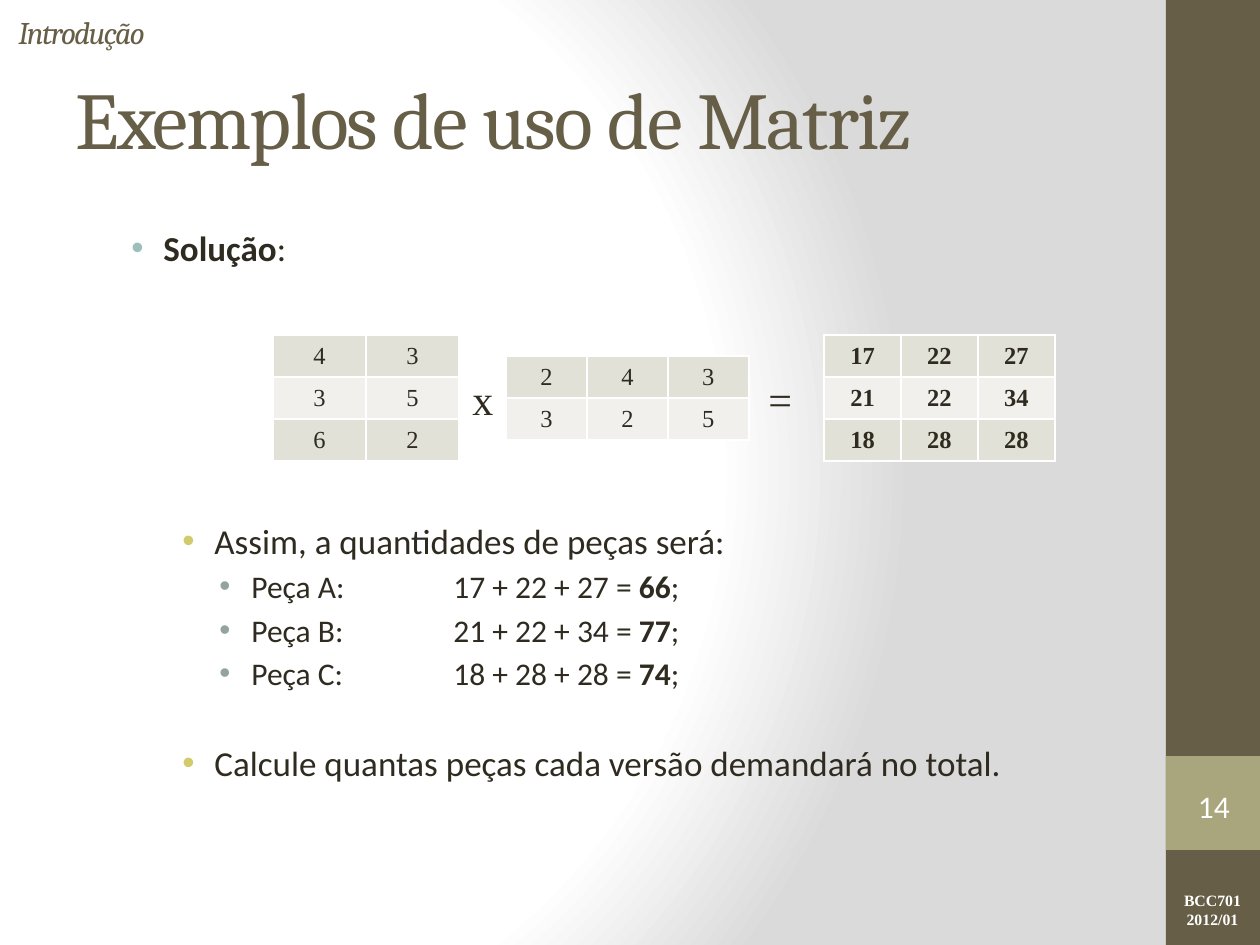
import pptx
import pptx.util
import pptx.oxml
import pptx.oxml.ns
from pptx.dml.color import RGBColor
from pptx.enum.shapes import MSO_SHAPE
from pptx.enum.text import MSO_ANCHOR, PP_ALIGN


class Theme:
    brown, olive, ink, white = "675E47", "A9A57C", "2F2B20", "FFFFFF"
    bands = ("E2E1D7", "F1F0EC")
    bullets = {1: "9CBEBD", 2: "D2CB6C", 3: "95A39D"}
    heading, body, serif = "Cambria", "Calibri", "Times New Roman"
    title, operator, large, medium, cell, small = 46, 24, 20, 18, 14, 9


INDENTS = {1: 88, 2: 139, 3: 176}
HANGING = 32
VALUE_TAB = 378
ROW_HEIGHT = 42

BODY = [
    (1, 0, [("Solução", True), (":", False)]),
    (2, 143.6, [("Assim, a quantidades de peças será:", False)]),
    (3, 3.2, [("Peça A:\t17 + 22 + 27 = ", False), ("66", True), (";", False)]),
    (3, 3.2, [("Peça B:\t21 + 22 + 34 = ", False), ("77", True), (";", False)]),
    (3, 3.2, [("Peça C:\t18 + 28 + 28 = ", False), ("74", True), (";", False)]),
    (2, 28.7, [("Calcule quantas peças cada versão demandará no total.", False)]),
]

MATRICES = [
    {"at": (824, 335), "column": 77, "bold": True,
     "rows": [(17, 22, 27), (21, 22, 34), (18, 28, 28)]},
    {"at": (273, 335), "column": 93, "bold": False,
     "rows": [(4, 3), (3, 5), (6, 2)]},
    {"at": (506, 356), "column": 81, "bold": False,
     "rows": [(2, 4, 3), (3, 2, 5)]},
]

OPERATORS = [("x", (460, 367, 47, 63)), ("=", (756, 367, 49, 63))]

NAMESPACE = pptx.oxml.ns.nsdecls("a", "p")
BACKGROUND = f"""<p:bg {NAMESPACE}><p:bgPr><a:gradFill rotWithShape="1"><a:gsLst>
<a:gs pos="0"><a:srgbClr val="FFFFFF"/></a:gs>
<a:gs pos="75000"><a:srgbClr val="FFFFFF"/></a:gs>
<a:gs pos="100000"><a:srgbClr val="DADADA"/></a:gs></a:gsLst>
<a:path path="circle"><a:fillToRect l="20000" t="50000" r="100000" b="50000"/></a:path>
</a:gradFill><a:effectLst/></p:bgPr></p:bg>"""


def px(value):
    return pptx.util.Emu(round(value * 914400 / 126))


def color(value):
    return RGBColor.from_string(value)


def append_xml(parent, markup):
    parent.append(pptx.oxml.parse_xml(markup))


def write(paragraph, text, *, size, font, fill, bold=False, italic=False,
          align=PP_ALIGN.LEFT, spacing=None):
    paragraph.alignment = align
    run = paragraph.add_run()
    run.text = text
    run.font.size = pptx.util.Pt(size)
    run.font.name = font
    run.font.color.rgb = color(fill)
    run.font.bold = bold
    run.font.italic = italic
    if spacing is not None:
        run._r.get_or_add_rPr().set("spc", str(spacing))


def add_box(slide, bounds, anchor=MSO_ANCHOR.TOP, wrap=True):
    frame = slide.shapes.add_textbox(*map(px, bounds)).text_frame
    frame.word_wrap = wrap
    frame.vertical_anchor = anchor
    return frame


def add_panel(slide, bounds, fill=None, preset=MSO_SHAPE.RECTANGLE):
    shape = slide.shapes.add_shape(preset, *map(px, bounds))
    shape.shadow.inherit = False
    shape.line.fill.background()
    if fill:
        shape.fill.solid()
        shape.fill.fore_color.rgb = color(fill)
    else:
        shape.fill.background()
    return shape


def format_bullet(paragraph, level):
    properties = paragraph._p.get_or_add_pPr()
    properties.set("marL", str(px(INDENTS[level])))
    properties.set("indent", str(-px(HANGING)))
    append_xml(properties, f'<a:buClr {NAMESPACE}><a:srgbClr val="{Theme.bullets[level]}"/></a:buClr>')
    append_xml(properties, f'<a:buFont {NAMESPACE} typeface="Arial"/>')
    append_xml(properties, f'<a:buChar {NAMESPACE} char="•"/>')
    if level == 3:
        stops = "".join(f'<a:tab pos="{px(stop)}" algn="l"/>'
                        for stop in (VALUE_TAB - INDENTS[level], VALUE_TAB))
        append_xml(properties, f"<a:tabLst {NAMESPACE}>{stops}</a:tabLst>")


def add_body(slide):
    frame = add_box(slide, (63, 220, 1050, 662))
    for index, (level, before, runs) in enumerate(BODY):
        paragraph = frame.add_paragraph() if index else frame.paragraphs[0]
        paragraph.level = level
        format_bullet(paragraph, level)
        paragraph.space_before = pptx.util.Pt(before)
        size = Theme.medium if level == 3 else Theme.large
        for text, bold in runs:
            write(paragraph, text, size=size, font=Theme.body, fill=Theme.ink, bold=bold)


def add_matrix(slide, matrix):
    rows, width = matrix["rows"], matrix["column"]
    columns = len(rows[0])
    bounds = (*matrix["at"], width * columns, ROW_HEIGHT * len(rows))
    table = slide.shapes.add_table(len(rows), columns, *map(px, bounds)).table
    table.first_row = table.horz_banding = False
    for column in table.columns:
        column.width = px(width)
    for row_index, values in enumerate(rows):
        table.rows[row_index].height = px(ROW_HEIGHT)
        for column_index, value in enumerate(values):
            cell = table.cell(row_index, column_index)
            cell.vertical_anchor = MSO_ANCHOR.MIDDLE
            for side in "LRTB":
                append_xml(cell._tc.get_or_add_tcPr(),
                           f'<a:ln{side} {NAMESPACE} w="12700"><a:solidFill>'
                           f'<a:srgbClr val="{Theme.white}"/></a:solidFill></a:ln{side}>')
            cell.fill.solid()
            cell.fill.fore_color.rgb = color(Theme.bands[row_index % 2])
            write(cell.text_frame.paragraphs[0], str(value), size=Theme.cell, font=Theme.serif,
                  fill=Theme.ink, bold=matrix["bold"], align=PP_ALIGN.CENTER)


def add_sidebar(slide):
    add_panel(slide, (1166, 0, 94, 945), Theme.brown)
    add_panel(slide, (1166, 756, 94, 94), Theme.olive)
    course = add_box(slide, (1167, 885, 91, 50))
    course.add_paragraph()
    for paragraph, text in zip(course.paragraphs, ("BCC701", "2012/01")):
        write(paragraph, text, size=Theme.small, font=Theme.serif, fill=Theme.white,
              bold=True, align=PP_ALIGN.CENTER)
    number = add_panel(slide, (1176, 779, 76, 54), preset=MSO_SHAPE.DOUBLE_BRACKET).text_frame
    number.margin_left = number.margin_right = number.margin_top = number.margin_bottom = 0
    number.vertical_anchor = MSO_ANCHOR.MIDDLE
    write(number.paragraphs[0], "14", size=Theme.medium, font=Theme.body,
          fill=Theme.white, align=PP_ALIGN.CENTER)


def main():
    presentation = pptx.Presentation()
    presentation.slide_width, presentation.slide_height = px(1260), px(945)
    slide = presentation.slides.add_slide(presentation.slide_layouts[6])
    slide._element.cSld.insert(0, pptx.oxml.parse_xml(BACKGROUND))

    add_sidebar(slide)
    title = add_box(slide, (63, 38, 1050, 158), MSO_ANCHOR.MIDDLE)
    write(title.paragraphs[0], "Exemplos de uso de Matriz", size=Theme.title,
          font=Theme.heading, fill=Theme.brown, spacing=-100)
    add_body(slide)
    section = add_box(slide, (6, 10, 1048, 43), MSO_ANCHOR.MIDDLE)
    write(section.paragraphs[0], "Introdução", size=Theme.medium, font=Theme.heading,
          fill=Theme.brown, italic=True, spacing=-100)
    for symbol, bounds in OPERATORS:
        write(add_box(slide, bounds, wrap=False).paragraphs[0], symbol,
              size=Theme.operator, font=Theme.serif, fill=Theme.ink)
    for matrix in MATRICES:
        add_matrix(slide, matrix)

    presentation.save("out.pptx")


if __name__ == "__main__":
    main()
